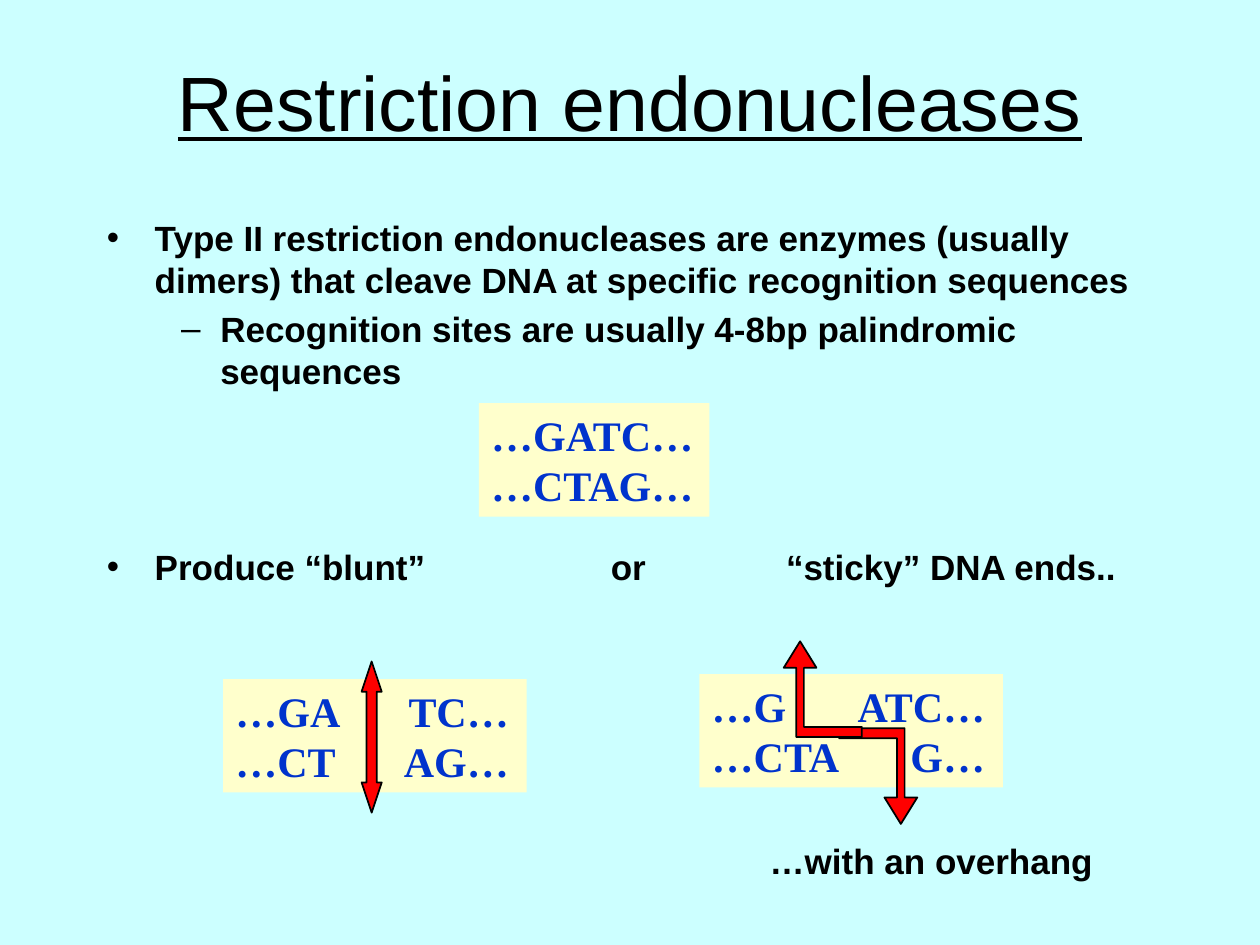
from dataclasses import dataclass

from lxml.etree import SubElement
from pptx import Presentation
from pptx.dml.color import RGBColor
from pptx.enum.shapes import MSO_SHAPE as Shape
from pptx.enum.text import MSO_ANCHOR as Anchor, PP_ALIGN as Align
from pptx.oxml.ns import qn
from pptx.util import Inches, Pt

BLACK = RGBColor(0x00, 0x00, 0x00)
RED = RGBColor(0xFF, 0x00, 0x00)
BLUE = RGBColor(0x00, 0x33, 0xCC)
CREAM = RGBColor(0xFF, 0xFF, 0xCC)
AQUA = RGBColor(0xCC, 0xFF, 0xFF)

TITLE = {"name": "Arial", "size": Pt(44), "underline": True}
BODY = {"name": "Arial", "size": Pt(20), "bold": True}
BASES = {"name": "Times New Roman", "size": Pt(24), "bold": True}


@dataclass(frozen=True)
class Point:
    text: str
    bullet: str = ""
    margin: float = 0.38
    indent: float = -0.38
    before: float = 4
    tabs: tuple[float, ...] = ()


@dataclass(frozen=True)
class Sequence:
    left: float
    top: float
    width: float
    strands: tuple[str, str]
    tab: float = 0


POINTS = (
    Point("Type II restriction endonucleases are enzymes (usually dimers) "
          "that cleave DNA at specific recognition sequences", "•"),
    Point("Recognition sites are usually 4-8bp palindromic sequences", "–",
          margin=0.9, indent=-0.31),
    Point("Produce “blunt”\tor\t“sticky” DNA ends..", "•", before=88,
          tabs=(4, 5.39)),
    Point("…with an overhang", margin=5.26, indent=0, before=144),
)
SEQUENCES = (
    Sequence(3.8, 3.2, 1.83, ("…GATC…", "…CTAG…")),
    Sequence(5.55, 5.35, 2.41, ("…G\tATC…", "…CTA\tG…"), 2.17),
    Sequence(1.77, 5.39, 2.41, ("…GA\tTC…", "…CT\tAG…"), 2.17),
)
BLUNT_CUT = ((2.95, 5.25), (3.03, 5.49), (2.99, 5.49), (2.99, 6.21), (3.03, 6.21),
             (2.95, 6.45), (2.87, 6.21), (2.91, 6.21), (2.91, 5.49), (2.87, 5.49))
UPPER_CUT = ((6.35, 5.09), (6.48, 5.3), (6.38, 5.3), (6.38, 5.77), (6.84, 5.77),
             (6.84, 5.85), (6.32, 5.85), (6.32, 5.3), (6.22, 5.3))
LOWER_CUT = tuple((13.5 - x, 11.63 - y) for x, y in UPPER_CUT)


def write(paragraph, text: str, style: dict, color: RGBColor) -> None:
    run = paragraph.add_run()
    run.text = text
    for key, value in style.items():
        setattr(run.font, key, value)
    run.font.color.rgb = color


def set_tabs(paragraph, stops: tuple[float, ...], align: str) -> None:
    tab_list = SubElement(paragraph._p.get_or_add_pPr(), qn("a:tabLst"))
    for stop in stops:
        SubElement(tab_list, qn("a:tab"), pos=str(Inches(stop)), algn=align)


def add_title(slide, text: str) -> None:
    frame = slide.shapes.add_textbox(
        Inches(0.75), Inches(0.17), Inches(8.5), Inches(1.25)).text_frame
    frame.word_wrap = True
    frame.vertical_anchor = Anchor.MIDDLE
    frame.paragraphs[0].alignment = Align.CENTER
    write(frame.paragraphs[0], text, TITLE, BLACK)


def add_points(slide, points: tuple[Point, ...]) -> None:
    frame = slide.shapes.add_textbox(
        Inches(0.75), Inches(1.67), Inches(8.5), Inches(4.83)).text_frame
    frame.word_wrap = True
    for index, point in enumerate(points):
        paragraph = frame.add_paragraph() if index else frame.paragraphs[0]
        paragraph.space_before = Pt(point.before)
        properties = paragraph._p.get_or_add_pPr()
        properties.set("marL", str(Inches(point.margin)))
        properties.set("indent", str(Inches(point.indent)))
        if point.bullet:
            SubElement(properties, qn("a:buFont"), typeface="Arial")
            SubElement(properties, qn("a:buChar"), char=point.bullet)
        if point.tabs:
            set_tabs(paragraph, point.tabs, "l")
        write(paragraph, point.text, BODY, BLACK)


def add_sequence(slide, sequence: Sequence) -> None:
    box = slide.shapes.add_shape(
        Shape.RECTANGLE, Inches(sequence.left), Inches(sequence.top),
        Inches(sequence.width), Inches(0.9))
    box.shadow.inherit = False
    box.fill.solid()
    box.fill.fore_color.rgb = CREAM
    box.line.fill.background()
    frame = box.text_frame
    frame.word_wrap = True
    frame.vertical_anchor = Anchor.TOP
    for index, strand in enumerate(sequence.strands):
        paragraph = frame.add_paragraph() if index else frame.paragraphs[0]
        paragraph.alignment = Align.LEFT
        if sequence.tab:
            set_tabs(paragraph, (sequence.tab,), "r")
        write(paragraph, strand, BASES, BLUE)


def add_cut(slide, corners: tuple[tuple[float, float], ...]) -> None:
    start, *rest = [(Inches(x), Inches(y)) for x, y in corners]
    builder = slide.shapes.build_freeform(*start)
    builder.add_line_segments(rest, close=True)
    arrow = builder.convert_to_shape()
    arrow.shadow.inherit = False
    arrow.fill.solid()
    arrow.fill.fore_color.rgb = RED
    arrow.line.color.rgb = BLACK
    arrow.line.width = Pt(1)


def main() -> None:
    """Build the restriction endonucleases slide."""
    deck = Presentation()
    deck.slide_width, deck.slide_height = Inches(10), Inches(7.5)
    slide = deck.slides.add_slide(deck.slide_layouts[6])
    slide.background.fill.solid()
    slide.background.fill.fore_color.rgb = AQUA
    add_title(slide, "Restriction endonucleases")
    add_points(slide, POINTS)
    for sequence in SEQUENCES:
        add_sequence(slide, sequence)
    for corners in (BLUNT_CUT, LOWER_CUT, UPPER_CUT):
        add_cut(slide, corners)
    deck.save("out.pptx")


if __name__ == "__main__":
    main()
